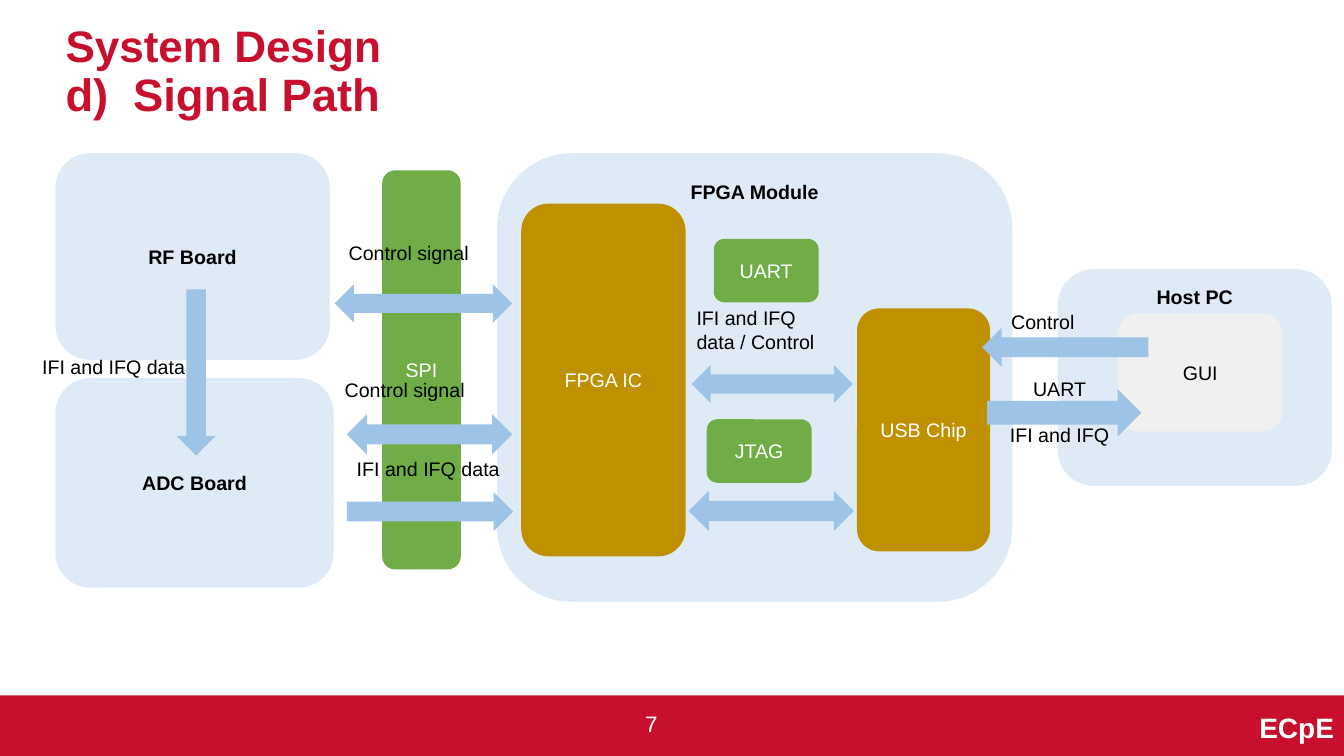
import pptx
import pptx.util
import lxml.etree
from pptx.dml.color import RGBColor
from pptx.enum.shapes import MSO_SHAPE
from pptx.enum.text import MSO_ANCHOR, PP_ALIGN
from pptx.oxml.ns import qn

PX = 9144  # 100 px to the inch
RED = RGBColor(0xC8, 0x10, 0x2E)
PALE_BLUE = RGBColor(0xDE, 0xEB, 0xF7)
ARROW_BLUE = RGBColor(0x9D, 0xC3, 0xE6)
GREEN = RGBColor(0x70, 0xAD, 0x47)
GOLD = RGBColor(0xBF, 0x90, 0x00)
GREY = RGBColor(0xF1, 0xF0, 0xF0)
BLACK = RGBColor(0, 0, 0)
WHITE = RGBColor(0xFF, 0xFF, 0xFF)
LEFT, CENTER, RIGHT = PP_ALIGN.LEFT, PP_ALIGN.CENTER, PP_ALIGN.RIGHT
TOP, MIDDLE = MSO_ANCHOR.TOP, MSO_ANCHOR.MIDDLE

prs = pptx.Presentation()
prs.slide_width, prs.slide_height = 1333 * PX, 750 * PX
s = prs.slides.add_slide(prs.slide_layouts[5])


def write(sp, text, color=BLACK, align=LEFT, anchor=TOP, size=14, bold=False):
    tf = sp.text_frame
    tf.word_wrap = True
    tf.vertical_anchor = anchor
    tf.text = text
    for p in tf.paragraphs:
        p.alignment = align
        for r in p.runs:
            r.font.name = "Arial"
            r.font.size = pptx.util.Pt(size)
            r.font.bold = bold
            r.font.color.rgb = color
    return tf


def add_block(kind, box, fill):
    sp = s.shapes.add_shape(kind, *[v * PX for v in box])
    sp.shadow.inherit = False
    sp.fill.solid()
    sp.fill.fore_color.rgb = fill
    sp.line.fill.background()
    return sp


# Footer band
add_block(MSO_SHAPE.RECTANGLE, (0, 690, 1333, 60), RED)

# Title, second line with a tab after its letter
title = s.shapes.title
title.left, title.top, title.width, title.height = [v * PX for v in (55, 43, 1225, 59)]
tf = write(title, "System Design\vd)\tSignal Path", RED, LEFT, MIDDLE, 32.4, True)
tf.auto_size = pptx.enum.text.MSO_AUTO_SIZE.NONE
p = tf.paragraphs[0]
p.line_spacing = 0.9
p.runs[0].font.size = pptx.util.Pt(31.5)
tabs = lxml.etree.SubElement(p._p.get_or_add_pPr(), qn("a:tabLst"))
lxml.etree.SubElement(tabs, qn("a:tab"), pos=str(67 * PX), algn="l")

# Boards, buses and chips
blocks = [
    ("RF Board", (55, 152, 272, 205), PALE_BLUE, BLACK, MIDDLE, True),
    ("ADC Board", (55, 375, 276, 208), PALE_BLUE, BLACK, MIDDLE, True),
    ("FPGA Module", (493, 152, 511, 445), PALE_BLUE, BLACK, TOP, True),
    ("Host PC", (1049, 267, 272, 215), PALE_BLUE, BLACK, TOP, True),
    ("SPI", (379, 169, 78, 396), GREEN, WHITE, MIDDLE, False),
    ("USB Chip", (850, 306, 132, 241), GOLD, WHITE, MIDDLE, False),
    ("JTAG", (701, 416, 104, 63), GREEN, WHITE, MIDDLE, False),
    ("UART", (708, 237, 104, 63), GREEN, WHITE, MIDDLE, False),
    ("FPGA IC", (517, 202, 163, 350), GOLD, WHITE, MIDDLE, False),
    ("GUI", (1109, 311, 163, 117), GREY, BLACK, MIDDLE, False),
]
for text, box, fill, color, anchor, bold in blocks:
    sp = add_block(MSO_SHAPE.ROUNDED_RECTANGLE, box, fill)
    write(sp, text, color, CENTER, anchor, bold=bold)

# Signal arrows
BOTH, ONE = MSO_SHAPE.LEFT_RIGHT_ARROW, MSO_SHAPE.RIGHT_ARROW
arrows = [
    (BOTH, (332, 282, 176, 38), 0),
    (BOTH, (344, 411, 164, 40), 0),
    (ONE, (344, 488, 165, 39), 0),
    (BOTH, (686, 362, 160, 38), 0),
    (BOTH, (683, 487, 164, 40), 0),
    (ONE, (979, 386, 153, 47), 0),
    (ONE, (974, 325, 165, 39), 180),
    (ONE, (112, 350, 165, 39), 90),
]
for kind, box, turn in arrows:
    add_block(kind, box, ARROW_BLUE).rotation = turn

# Signal labels, slide number and department name
labels = [
    ("IFI and IFQ data", (344, 448, 194, 40), {}),
    ("Control signal", (332, 370, 194, 40), {}),
    ("Control signal", (336, 234, 194, 40), {}),
    ("IFI and IFQ data / Control", (681, 299, 169, 71), {}),
    ("UART\nIFI and IFQ", (968, 369, 166, 81), {"align": CENTER}),
    ("Control", (993, 303, 109, 34), {}),
    ("IFI and IFQ data", (32, 347, 194, 40), {}),
    ("7", (630, 700, 37, 37), {"color": WHITE, "size": 16}),
    ("ECpE", (883, 702, 450, 40),
     {"color": WHITE, "align": RIGHT, "anchor": MIDDLE, "size": 20, "bold": True}),
]
for text, box, style in labels:
    tf = write(s.shapes.add_textbox(*[v * PX for v in box]), text, **style)
    for p in tf.paragraphs[1:]:
        p.space_before = pptx.util.Pt(16)  # room for the arrow between the lines

prs.save("out.pptx")
